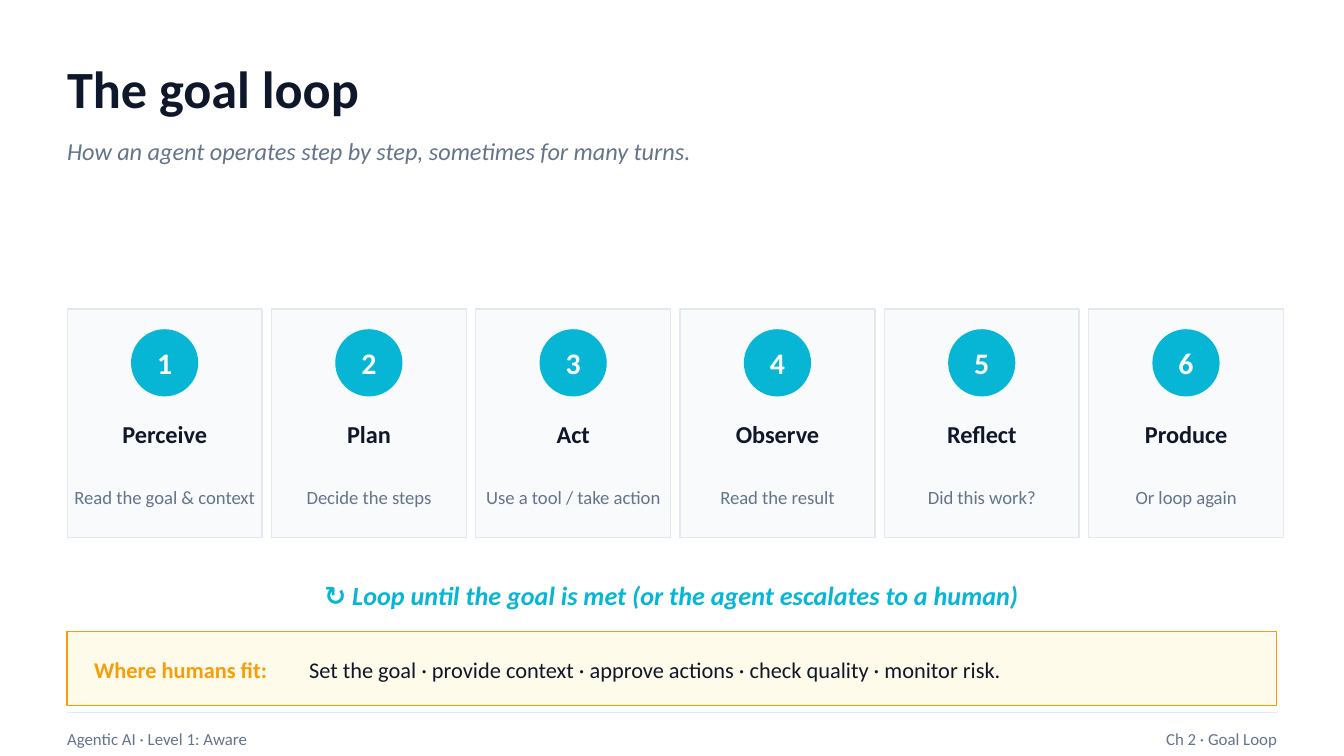
from lxml import etree
from pptx import Presentation
from pptx.dml.color import RGBColor
from pptx.enum.shapes import MSO_CONNECTOR, MSO_SHAPE
from pptx.enum.text import MSO_ANCHOR, PP_ALIGN
from pptx.oxml.ns import qn
from pptx.util import Inches, Pt

RECT, OVAL = MSO_SHAPE.RECTANGLE, MSO_SHAPE.OVAL
STRAIGHT = MSO_CONNECTOR.STRAIGHT
MIDDLE = MSO_ANCHOR.MIDDLE
LEFT, CENTER, RIGHT = PP_ALIGN.LEFT, PP_ALIGN.CENTER, PP_ALIGN.RIGHT

FONT = "Calibri"
INK, GRAY, PALE, RULE = "0F172A", "64748B", "F8FAFC", "E2E8F0"
CYAN, AMBER, CREAM = "06B6D4", "F59E0B", "FFFBEB"

STEPS = [
    ("Perceive", "Read the goal & context"),
    ("Plan", "Decide the steps"),
    ("Act", "Use a tool / take action"),
    ("Observe", "Read the result"),
    ("Reflect", "Did this work?"),
    ("Produce", "Or loop again"),
]


def color(code):
    """Turn a hex string into a colour."""
    return RGBColor.from_string(code)


def label(slide, x, y, w, h, text, size, ink, bold=False, italic=False, align=LEFT):
    """Add a text box with one styled paragraph and no margins."""
    box = slide.shapes.add_textbox(Inches(x), Inches(y), Inches(w), Inches(h))
    frame = box.text_frame
    frame.word_wrap = True
    frame.vertical_anchor = MIDDLE
    frame.margin_left = frame.margin_right = 0
    frame.margin_top = frame.margin_bottom = 0
    para = frame.paragraphs[0]
    para.text = text
    para.alignment = align
    font = para.font
    font.name, font.size = FONT, Pt(size)
    font.bold, font.italic = bold, italic
    font.color.rgb = color(ink)


def block(slide, kind, x, y, w, h, fill, edge=None):
    """Add a filled shape, with a thin outline if an edge colour is given."""
    shape = slide.shapes.add_shape(kind, Inches(x), Inches(y), Inches(w), Inches(h))
    shape.shadow.inherit = False
    shape.fill.solid()
    shape.fill.fore_color.rgb = color(fill)
    if edge:
        shape.line.color.rgb = color(edge)
        shape.line.width = Pt(0.75)
    else:
        shape.line.fill.background()


def header(slide, x, y, w):
    """Draw the title and subtitle."""
    label(slide, x, y, w, 0.6, "The goal loop", 28, INK, bold=True)
    label(slide, x, y + 0.6, w, 0.35,
          "How an agent operates step by step, sometimes for many turns.",
          13, GRAY, italic=True)


def card(slide, x, y, w, h, number, name, detail):
    """Draw one numbered step."""
    block(slide, RECT, x, y, w, h, PALE, RULE)
    disc = 0.5
    badge = (x + (w - disc) / 2, y + 0.15, disc, disc)
    block(slide, OVAL, *badge, CYAN)
    label(slide, *badge, str(number), 16, PALE, bold=True, align=CENTER)
    pad = 0.05
    label(slide, x + pad, y + 0.75, w - 2 * pad, 0.35, name, 13, INK,
          bold=True, align=CENTER)
    label(slide, x + pad, y + 1.12, w - 2 * pad, 0.55, detail, 10, GRAY,
          align=CENTER)


def steps(slide, x, y, w, h, gap):
    """Draw the row of steps."""
    for index, (name, detail) in enumerate(STEPS):
        card(slide, x + index * (w + gap), y, w, h, index + 1, name, detail)


def banner(slide, x, y, w, h):
    """Draw the box on the human role."""
    block(slide, RECT, x, y, w, h, CREAM, AMBER)
    label(slide, x + 0.2, y + 0.08, 1.6, 0.4, "Where humans fit:", 12, AMBER,
          bold=True)
    label(slide, x + 1.8, y + 0.08, 7, 0.4,
          "Set the goal · provide context · approve actions · check quality · monitor risk.",
          12, INK)


def footer(slide, x, y, w):
    """Draw the rule with the course and chapter names below."""
    rule = slide.shapes.add_connector(
        STRAIGHT, Inches(x), Inches(y), Inches(x + w), Inches(y))
    rule.line.color.rgb = color(RULE)
    rule.line.width = Pt(0.75)
    etree.SubElement(rule._element.spPr, qn("a:effectLst"))
    label(slide, x, y + 0.05, 5, 0.3, "Agentic AI · Level 1: Aware", 9, GRAY)
    label(slide, x + 5, y + 0.05, w - 5, 0.3, "Ch 2 · Goal Loop", 9, GRAY,
          align=RIGHT)


def main():
    """Build and save the slide."""
    deck = Presentation()
    deck.slide_width = Inches(10)
    deck.slide_height = Inches(10 * 9 / 16)
    slide = deck.slides.add_slide(deck.slide_layouts[6])
    left, width = 0.5, 9
    header(slide, left, 0.35, width)
    steps(slide, left, 2.3, 1.45, 1.7, 0.07)
    label(slide, left, 4.25, width, 0.35,
          "↻ Loop until the goal is met (or the agent escalates to a human)",
          14, CYAN, bold=True, italic=True, align=CENTER)
    banner(slide, left, 4.7, width, 0.55)
    footer(slide, left, 5.3, width)
    deck.save("out.pptx")


if __name__ == "__main__":
    main()
